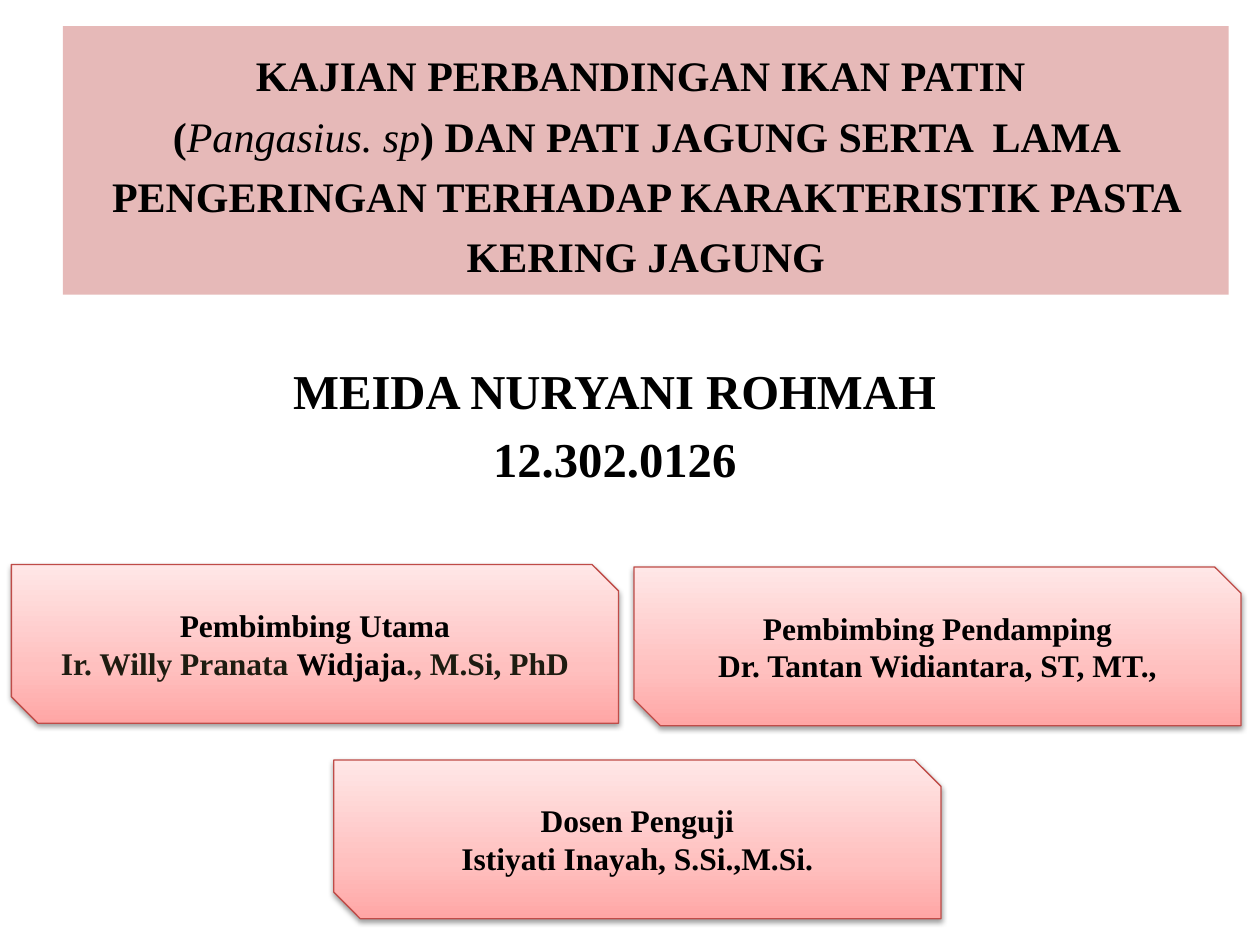
from lxml.etree import SubElement
from pptx import Presentation
from pptx.dml.color import RGBColor
from pptx.enum.shapes import MSO_SHAPE as SHAPE
from pptx.enum.text import MSO_ANCHOR as ANCHOR, PP_ALIGN as ALIGN
from pptx.oxml.ns import qn
from pptx.util import Cm, Pt

FONT = "Times New Roman"
COLORS = {
    "text": "000000",
    "soft": "1E1C11",
    "title": "E6B9B8",
    "border": "BF4C48",
    "low": "FFA6A5",
    "mid": "FFC0BF",
    "high": "FFE7E7",
}
CARD_W, CARD_H = 12.24, 3.2


def rgb(name):
    return RGBColor.from_string(COLORS[name])


def add_run(p, text, size, color="text", italic=False):
    r = p.add_run()
    r.text = text
    f = r.font
    f.name, f.size = FONT, Pt(size)
    f.bold, f.italic = not italic, italic
    f.color.rgb = rgb(color)


def add_lines(tf, lines, size, gap=0):
    for i, runs in enumerate(lines):
        p = tf.add_paragraph() if i else tf.paragraphs[0]
        p.alignment = ALIGN.CENTER
        if i:
            p.space_before = Pt(gap)
        for text, color in runs:
            add_run(p, text, size, color)


def add_title(s, x, y, w, h):
    sp = s.shapes.add_shape(SHAPE.RECTANGLE, Cm(x), Cm(y), Cm(w), Cm(h))
    sp.shadow.inherit = False
    sp.fill.solid()
    sp.fill.fore_color.rgb = rgb("title")
    sp.line.fill.background()
    tf = sp.text_frame
    tf.word_wrap = True
    tf.vertical_anchor = ANCHOR.MIDDLE
    p = tf.paragraphs[0]
    p.alignment = ALIGN.CENTER
    p.line_spacing = 1.2
    add_run(p, "KAJIAN PERBANDINGAN IKAN PATIN ", 24)
    p.add_line_break()
    add_run(p, "(", 24)
    add_run(p, "Pangasius. sp", 24, italic=True)
    add_run(p, ") DAN PATI JAGUNG SERTA  LAMA PENGERINGAN TERHADAP "
               "KARAKTERISTIK PASTA KERING JAGUNG", 24)


def add_author(s, x, y, w, h):
    sp = s.shapes.add_textbox(Cm(x), Cm(y), Cm(w), Cm(h))
    tf = sp.text_frame
    tf.word_wrap = True
    lines = [[("MEIDA NURYANI ROHMAH", "text")], [("12.302.0126", "text")]]
    add_lines(tf, lines, 27.8, gap=6)


def set_gradient(sp, stops, angle):
    sp.fill.gradient()
    sp.fill.gradient_angle = angle
    gs_list = sp.element.spPr.find(qn("a:gradFill")).find(qn("a:gsLst"))
    for gs in list(gs_list):
        gs_list.remove(gs)
    for pos, name in stops:
        gs = SubElement(gs_list, qn("a:gs"), pos=str(pos * 1000))
        SubElement(gs, qn("a:srgbClr"), val=COLORS[name])


def set_shadow(sp):
    sp.shadow.inherit = False
    effects = sp.element.spPr.find(qn("a:effectLst"))
    shadow = SubElement(effects, qn("a:outerShdw"), blurRad=str(Pt(3.1)),
                        dist=str(Pt(1.6)), dir="5400000", rotWithShape="0")
    color = SubElement(shadow, qn("a:srgbClr"), val=COLORS["text"])
    SubElement(color, qn("a:alpha"), val="38000")


def add_card(s, x, y, w, h, lines):
    sp = s.shapes.add_shape(SHAPE.SNIP_2_DIAG_RECTANGLE,
                            Cm(x), Cm(y), Cm(w), Cm(h))
    set_gradient(sp, [(0, "low"), (35, "mid"), (100, "high")], 90)
    sp.line.color.rgb = rgb("border")
    sp.line.width = Pt(0.75)
    set_shadow(sp)
    tf = sp.text_frame
    tf.word_wrap = True
    tf.vertical_anchor = ANCHOR.MIDDLE
    add_lines(tf, lines, 18)


def main():
    prs = Presentation()
    prs.slide_width, prs.slide_height = Cm(25.4), Cm(19.05)
    s = prs.slides.add_slide(prs.slide_layouts[6])
    add_title(s, 1.27, 0.53, 23.5, 5.41)
    add_author(s, 5.51, 7.14, 13.77, 3.61)
    cards = [
        (0.23, 11.38, [[("Pembimbing Utama", "text")],
                       [("Ir. Willy Pranata ", "soft"), ("Widjaja", "text"),
                        ("., M.Si, PhD", "soft")]]),
        (12.78, 11.43, [[("Pembimbing Pendamping", "text")],
                        [("Dr. Tantan Widiantara, ST, MT.,", "text")]]),
        (6.73, 15.32, [[("Dosen Penguji", "text")],
                       [("Istiyati Inayah, S.Si.,M.Si.", "text")]]),
    ]
    for x, y, lines in cards:
        add_card(s, x, y, CARD_W, CARD_H, lines)
    prs.save("out.pptx")


if __name__ == "__main__":
    main()
